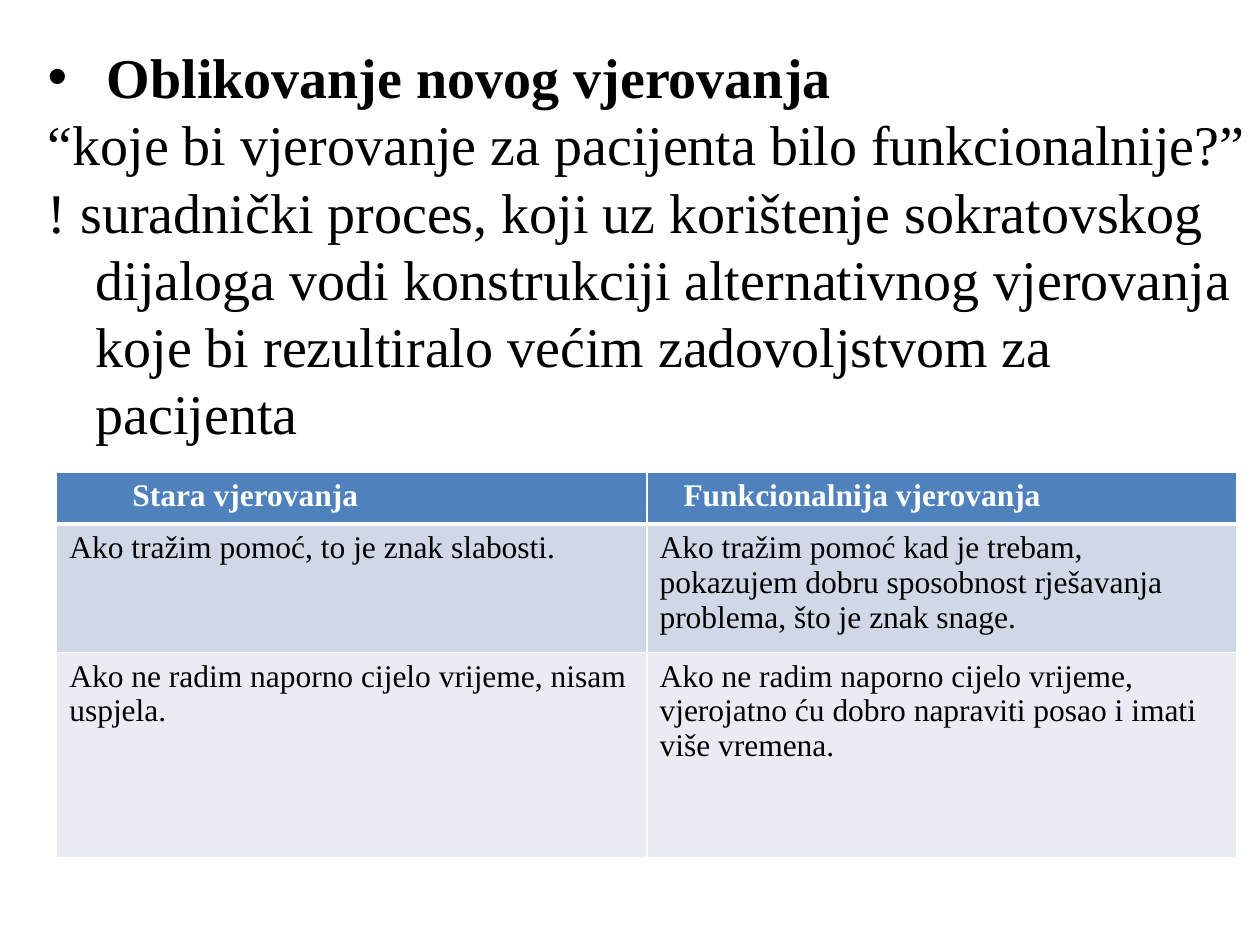
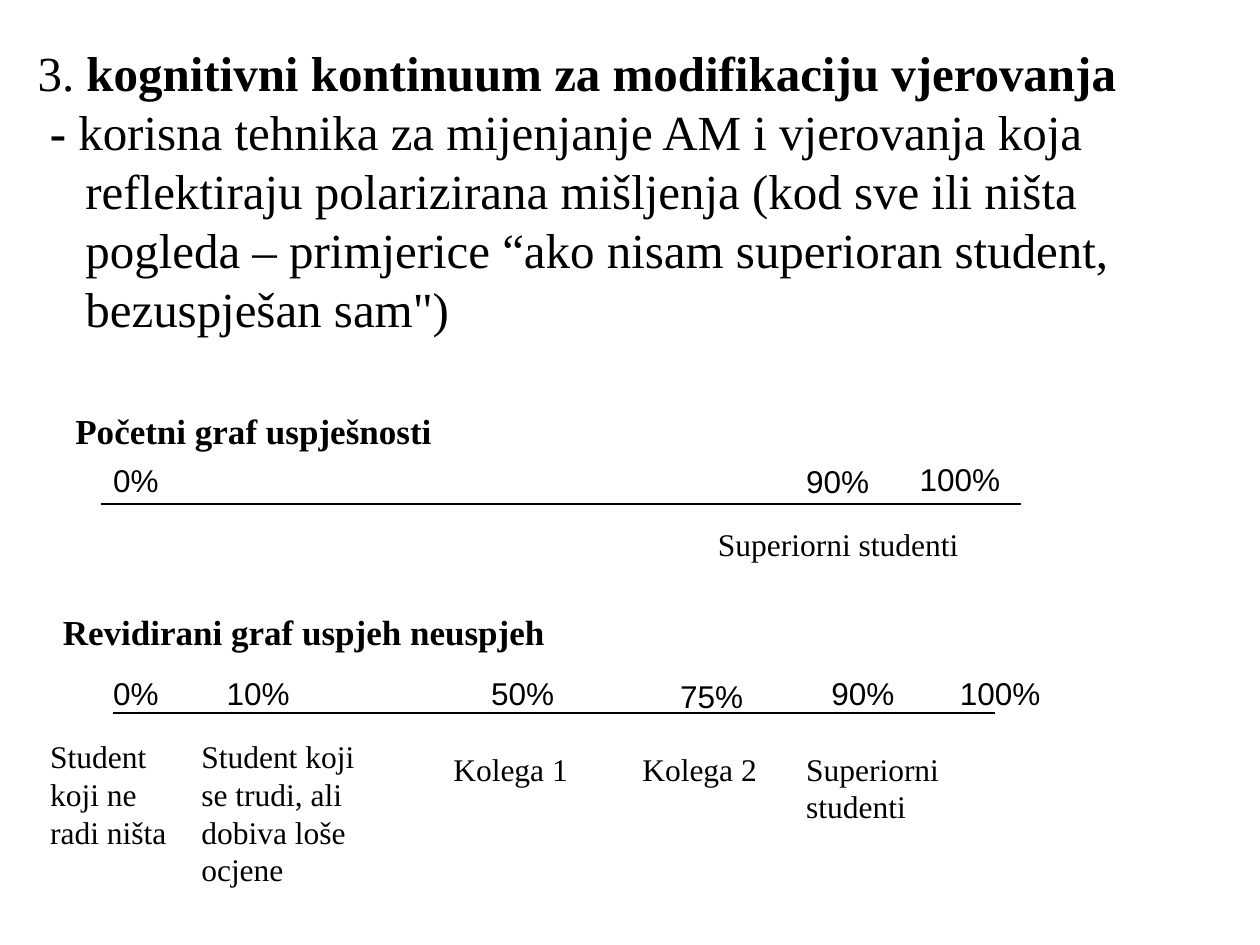
from lxml import etree
from pptx import Presentation
from pptx import util as u
from pptx.dml.color import RGBColor
from pptx.enum import shapes
from pptx.oxml import ns

COLOURS = {
    "ink": "000000",
    "paper": "FFFFFF",
    "header": "4F81BD",
    "band_dark": "D0D8E7",
    "band_light": "E9ECF3",
}
SERIF, SANS = "Times New Roman", "Arial"


def colour(name):
    return RGBColor.from_string(COLOURS[name])


class Deck:
    def __init__(self):
        self.prs = Presentation()
        self.prs.slide_width = u.Inches(10)
        self.prs.slide_height = u.Inches(7.5)
        self.slide = None

    def new_slide(self):
        self.slide = self.prs.slides.add_slide(self.prs.slide_layouts[6])

    def add_run(self, paragraph, words, size, font=SERIF, bold=False, ink="ink"):
        run = paragraph.add_run()
        run.text = words
        run.font.size = u.Pt(size)
        run.font.name = font
        run.font.bold = bold
        run.font.color.rgb = colour(ink)

    def indent(self, paragraph, left, first=0, bullet=None):
        props = paragraph._p.get_or_add_pPr()
        props.set("marL", str(u.Inches(left)))
        props.set("indent", str(u.Inches(first)))
        if bullet:
            etree.SubElement(props, ns.qn("a:buFont"), typeface=SANS)
            etree.SubElement(props, ns.qn("a:buChar"), char=bullet)

    def frame(self, left, top, width, height):
        box = self.slide.shapes.add_textbox(*map(u.Inches, (left, top, width, height)))
        box.text_frame.word_wrap = True
        return box.text_frame

    def label(self, left, top, width, height, words, size=18, font=SERIF, bold=False):
        paragraph = self.frame(left, top, width, height).paragraphs[0]
        self.add_run(paragraph, words, size, font, bold)

    def body(self, left, width, size, paragraphs):
        frame = self.frame(left, 0.29, width, 6.41)
        for i, (bullet, runs) in enumerate(paragraphs):
            paragraph = frame.add_paragraph() if i else frame.paragraphs[0]
            hang = 0.47 if bullet else 0.38
            self.indent(paragraph, hang, -hang, bullet)
            for words, bold in runs:
                self.add_run(paragraph, words, size, bold=bold)

    def axis(self, left, right, y):
        line = self.slide.shapes.add_connector(
            shapes.MSO_CONNECTOR.STRAIGHT, *map(u.Inches, (left, y, right, y)))
        line.line.color.rgb = colour("ink")
        line.line.width = u.Pt(0.75)
        etree.SubElement(line._element.spPr, ns.qn("a:effectLst"))

    def borders(self, cell, **widths):
        props = cell._tc.get_or_add_tcPr()
        for place, side in enumerate("LRTB"):
            edge = etree.Element(ns.qn(f"a:ln{side}"), w=str(u.Pt(widths.get(side, 0.96))))
            fill = etree.SubElement(edge, ns.qn("a:solidFill"))
            etree.SubElement(fill, ns.qn("a:srgbClr"), val=COLOURS["paper"])
            props.insert(place, edge)

    def table(self, left, top, width, heights, rows, fills, header_indents):
        grid = self.slide.shapes.add_table(
            len(rows), len(rows[0]),
            *map(u.Inches, (left, top, width, sum(heights)))).table
        for r, (row, height, fill) in enumerate(zip(rows, heights, fills)):
            grid.rows[r].height = u.Inches(height)
            for c, words in enumerate(row):
                cell = grid.cell(r, c)
                cell.fill.solid()
                cell.fill.fore_color.rgb = colour(fill)
                self.borders(cell, **{0: {"B": 3}, 1: {"T": 3}}.get(r, {}))
                paragraph = cell.text_frame.paragraphs[0]
                if r == 0:
                    self.indent(paragraph, header_indents[c])
                self.add_run(paragraph, words, 18, bold=r == 0,
                             ink="ink" if r else "paper")


def new_belief(deck):
    deck.new_slide()
    deck.body(0.28, 9.75, 32, [
        ("•", [("Oblikovanje novog vjerovanja", True)]),
        (None, [("“koje bi vjerovanje za pacijenta bilo funkcionalnije?”", False)]),
        (None, [("! suradnički proces, koji uz korištenje sokratovskog dijaloga vodi "
                 "konstrukciji alternativnog vjerovanja koje bi rezultiralo većim "
                 "zadovoljstvom za pacijenta", False)]),
    ])
    beliefs = [
        ("Stara vjerovanja", "Funkcionalnija vjerovanja"),
        ("Ako tražim pomoć, to je znak slabosti.",
         "Ako tražim pomoć kad je trebam, pokazujem dobru sposobnost rješavanja "
         "problema, što je znak snage."),
        ("Ako ne radim naporno cijelo vrijeme, nisam uspjela.",
         "Ako ne radim naporno cijelo vrijeme, vjerojatno ću dobro napraviti posao "
         "i imati više vremena."),
    ]
    deck.table(0.45, 3.75, 9.37, (0.41, 1.02, 1.63), beliefs,
               ("header", "band_dark", "band_light"), (0.5, 0.19))


def continuum(deck):
    deck.new_slide()
    deck.body(0.2, 9.53, 28, [
        (None, [("3. ", False), ("kognitivni kontinuum za modifikaciju vjerovanja", True)]),
        (None, [(" - ", True),
                ("korisna tehnika za mijenjanje AM i vjerovanja koja reflektiraju "
                 "polarizirana mišljenja (kod sve ili ništa pogleda – primjerice “ako "
                 "nisam superioran student, bezuspješan sam\")", False)]),
    ])
    deck.label(0.5, 3.2, 4, 0.41, "Početni graf uspješnosti", 20, bold=True)
    deck.label(0.4, 4.8, 4.4, 0.73, "Revidirani graf uspjeh neuspjeh", 20, bold=True)
    deck.axis(0.8, 8.1, 4)
    deck.axis(0.9, 7.9, 5.66)

    initial_marks = [(0.8, 3.61, "0%"), (6.3, 3.62, "90%"), (7.2, 3.6, "100%")]
    revised_marks = [(0.8, 5.3, "0%"), (1.7, 5.3, "10%"), (3.8, 5.3, "50%"),
                     (5.3, 5.32, "75%"), (6.5, 5.3, "90%"), (7.52, 5.3, "100%")]
    for left, top, percent in initial_marks + revised_marks:
        deck.label(left, top, 1, 0.38, percent, font=SANS)

    students = [
        (5.6, 4.12, 2.9, 0.38, "Superiorni studenti"),
        (0.3, 5.8, 1.2, 0.95, "Student koji ne radi ništa"),
        (1.5, 5.8, 1.5, 1.3, "Student koji se trudi, ali dobiva loše ocjene"),
        (3.5, 5.9, 1.4, 0.38, "Kolega 1"),
        (5, 5.9, 1.2, 0.38, "Kolega 2"),
        (6.3, 5.9, 1.4, 0.67, "Superiorni studenti"),
    ]
    for student in students:
        deck.label(*student)


def main():
    deck = Deck()
    new_belief(deck)
    continuum(deck)
    deck.prs.save("out.pptx")


if __name__ == "__main__":
    main()
